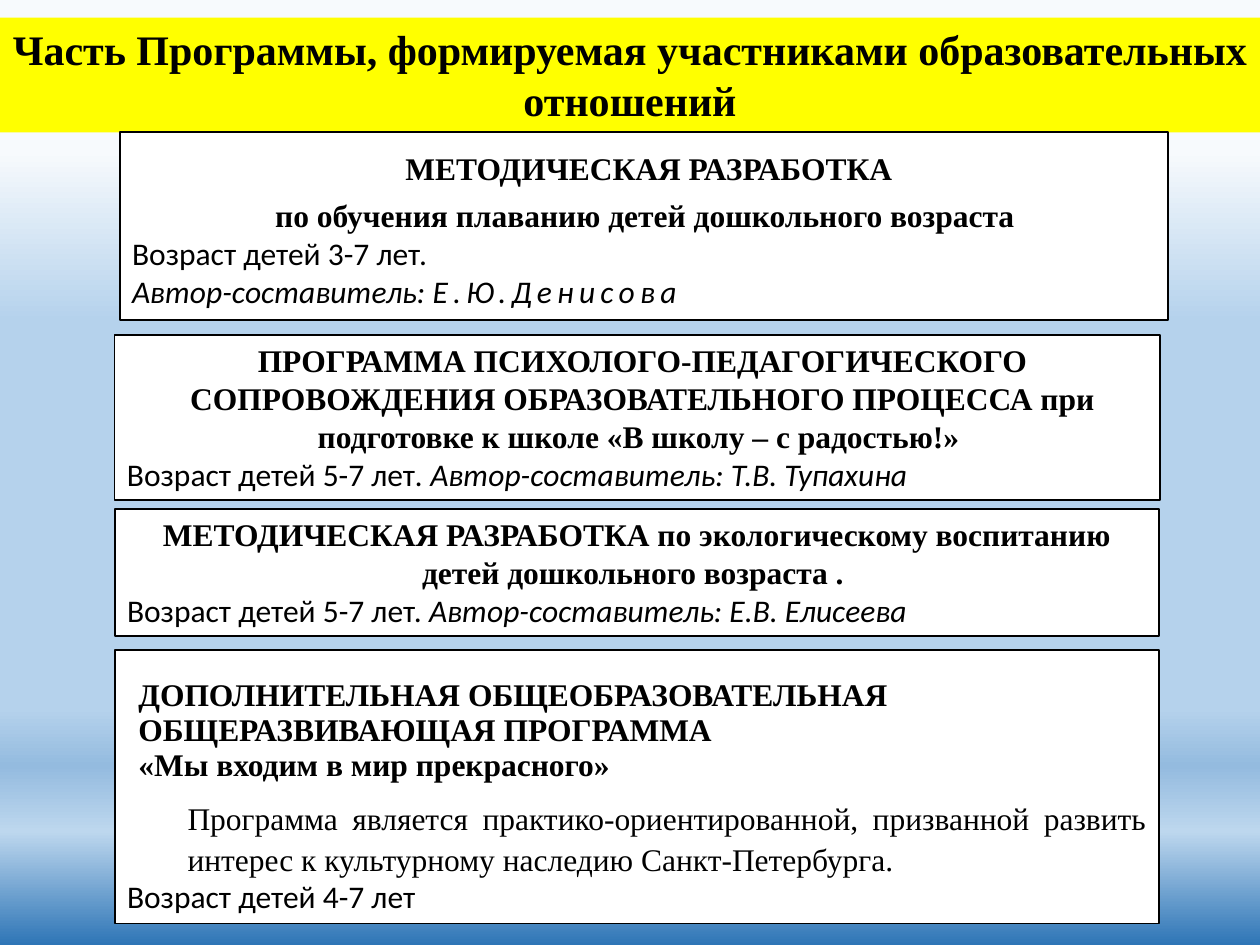
from copy import deepcopy

from pptx import Presentation
from pptx.dml.color import RGBColor
from pptx.enum.shapes import MSO_SHAPE
from pptx.enum.text import MSO_ANCHOR, MSO_AUTO_SIZE, PP_ALIGN
from pptx.oxml.ns import qn
from pptx.util import Inches, Pt

RECTANGLE = MSO_SHAPE.RECTANGLE
TOP, NO_FIT = MSO_ANCHOR.TOP, MSO_AUTO_SIZE.NONE
LEFT, CENTER, JUSTIFY = PP_ALIGN.LEFT, PP_ALIGN.CENTER, PP_ALIGN.JUSTIFY
SERIF, SANS = "Times New Roman", "Calibri"
BLACK, WHITE, YELLOW = "000000", "FFFFFF", "FFFF00"
TITLE_ONLY = 5

SKY_STOPS = [(16, "F7FAFD"), (34, "B5D2EC"), (75, "B5D2EC"),
             (81, "94BBDF"), (88, "BDD7EE"), (100, "2E75B6")]

HEADING = {"name": SERIF, "bold": True}
PROSE = {"name": SERIF}
DETAIL = {"name": SANS}
AUTHOR = {"name": SANS, "italic": True}

CENTERED = {"alignment": CENTER}
PLAIN = {"alignment": LEFT}
METHOD = {"alignment": CENTER, "line_spacing": Pt(13.6)}
METHOD_NEXT = {**METHOD, "space_before": Pt(13.6)}
PROGRAM = {"alignment": LEFT, "line_spacing": Pt(12), "space_after": Pt(8)}
SUMMARY = {"alignment": JUSTIFY, "line_spacing": 1.07}

CARDS = [
    ((0.95, 1.05, 8.32, 1.49), 0.24, [
        (METHOD, 0.08, [("МЕТОДИЧЕСКАЯ РАЗРАБОТКА", HEADING, 0)]),
        (METHOD_NEXT, 0.08, [("по обучения плаванию детей дошкольного возраста ", HEADING, 0)]),
        (PLAIN, 0, [("Возраст детей 3-7 лет.", DETAIL, 0)]),
        (PLAIN, 0, [("Автор-составитель: ", AUTHOR, 0), ("Е.Ю.Денисова", AUTHOR, 3)]),
    ]),
    ((0.91, 2.66, 8.3, 1.31), 0.05, [
        (CENTERED, 0.08, [("ПРОГРАММА ПСИХОЛОГО-ПЕДАГОГИЧЕСКОГО СОПРОВОЖДЕНИЯ "
                           "ОБРАЗОВАТЕЛЬНОГО ПРОЦЕССА при подготовке к школе "
                           "«В школу – с радостью!» ", HEADING, 0)]),
        (PLAIN, 0, [("Возраст детей 5-7 лет", DETAIL, 0),
                    (". Автор-составитель: Т.В. Тупахина", AUTHOR, 0)]),
    ]),
    ((0.91, 4.04, 8.29, 1.01), 0.05, [
        (CENTERED, 0, [("МЕТОДИЧЕСКАЯ РАЗРАБОТКА по экологическому воспитанию "
                        "детей дошкольного возраста . ", HEADING, 0)]),
        (PLAIN, 0, [("Возраст детей 5-7 лет. ", DETAIL, 0),
                    ("Автор-составитель: Е.В. Елисеева", AUTHOR, 0)]),
    ]),
    ((0.91, 5.16, 8.29, 2.17), 0.33, [
        *[(PROGRAM, 0.09, [(line, HEADING, 0)]) for line in (
            "ДОПОЛНИТЕЛЬНАЯ ОБЩЕОБРАЗОВАТЕЛЬНАЯ",
            "ОБЩЕРАЗВИВАЮЩАЯ ПРОГРАММА",
            "«Мы входим в мир прекрасного»")],
        (SUMMARY, 0.48, [("Программа является практико-ориентированной, призванной развить "
                          "интерес к культурному наследию Санкт-Петербурга.", PROSE, 0)]),
        (PLAIN, 0, [("Возраст детей 4-7 лет", DETAIL, 0)]),
    ]),
]


def color(hex_value):
    """Turn a hex string into a colour."""
    return RGBColor.from_string(hex_value)


def apply(target, values):
    """Set every attribute listed in a dict of format values."""
    for attribute, value in values.items():
        setattr(target, attribute, value)


def place(shape, box):
    """Move a shape to left, top, width and height in inches."""
    apply(shape, dict(zip(("left", "top", "width", "height"), map(Inches, box))))


def paint_background(slide):
    """Fill the background with the vertical sky gradient."""
    slide.background.fill.gradient()
    slide.background.fill.gradient_angle = 270
    stops = slide.element.find(".//" + qn("a:gsLst"))
    template = deepcopy(stops[0])
    for stop in list(stops):
        stops.remove(stop)
    for position, _ in SKY_STOPS:
        stop = deepcopy(template)
        stop.set("pos", str(position * 1000))
        stops.append(stop)
    for stop, (_, shade) in zip(slide.background.fill.gradient_stops, SKY_STOPS):
        stop.color.rgb = color(shade)


def write_run(paragraph, text, font, size, tracking=0):
    """Append one formatted run, with letter spacing in points."""
    run = paragraph.add_run()
    run.text = text
    apply(run.font, {"size": Pt(size), **font})
    run.font.color.rgb = color(BLACK)
    if tracking:
        run.font._element.set("spc", str(tracking * 100))


def write_paragraphs(frame, paragraphs, size):
    """Fill a text frame with formatted paragraphs."""
    for index, (layout, indent, runs) in enumerate(paragraphs):
        paragraph = frame.add_paragraph() if index else frame.paragraphs[0]
        apply(paragraph, layout)
        if indent:
            paragraph._p.get_or_add_pPr().set("marL", str(Inches(indent)))
        for text, font, tracking in runs:
            write_run(paragraph, text, font, size, tracking)


def add_heading(slide):
    """Put the heading on a yellow band across the slide."""
    heading = slide.shapes.title
    place(heading, (0, 0.14, 10, 0.91))
    heading.fill.solid()
    heading.fill.fore_color.rgb = color(YELLOW)
    apply(heading.text_frame, {"vertical_anchor": TOP, "auto_size": NO_FIT, "word_wrap": True})
    text = "Часть Программы, формируемая участниками образовательных отношений"
    write_paragraphs(heading.text_frame, [(CENTERED, 0, [(text, HEADING, 0)])], 24)


def add_card(slide, box, top_margin, paragraphs):
    """Add one white outlined program card."""
    card = slide.shapes.add_shape(RECTANGLE, *map(Inches, box))
    card.shadow.inherit = False
    card.fill.solid()
    card.fill.fore_color.rgb = color(WHITE)
    card.line.color.rgb = color(BLACK)
    card.line.width = Pt(1)
    apply(card.text_frame, {"vertical_anchor": TOP, "auto_size": NO_FIT,
                            "word_wrap": True, "margin_top": Inches(top_margin)})
    write_paragraphs(card.text_frame, paragraphs, 18)


def main():
    """Build and save the slide."""
    deck = Presentation()
    apply(deck, {"slide_width": Inches(10), "slide_height": Inches(7.5)})
    slide = deck.slides.add_slide(deck.slide_layouts[TITLE_ONLY])
    paint_background(slide)
    add_heading(slide)
    for box, top_margin, paragraphs in CARDS:
        add_card(slide, box, top_margin, paragraphs)
    deck.save("out.pptx")


if __name__ == "__main__":
    main()
